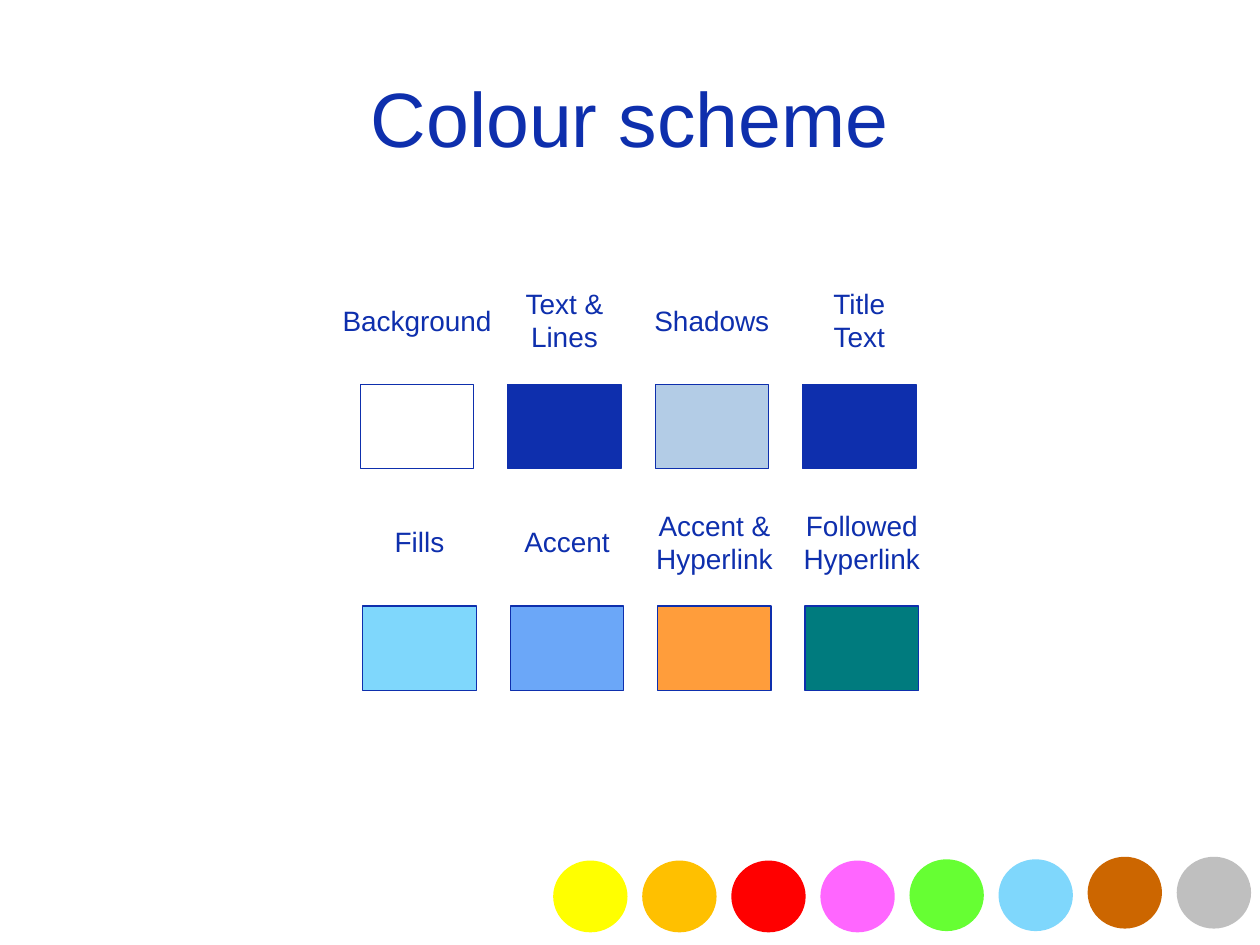
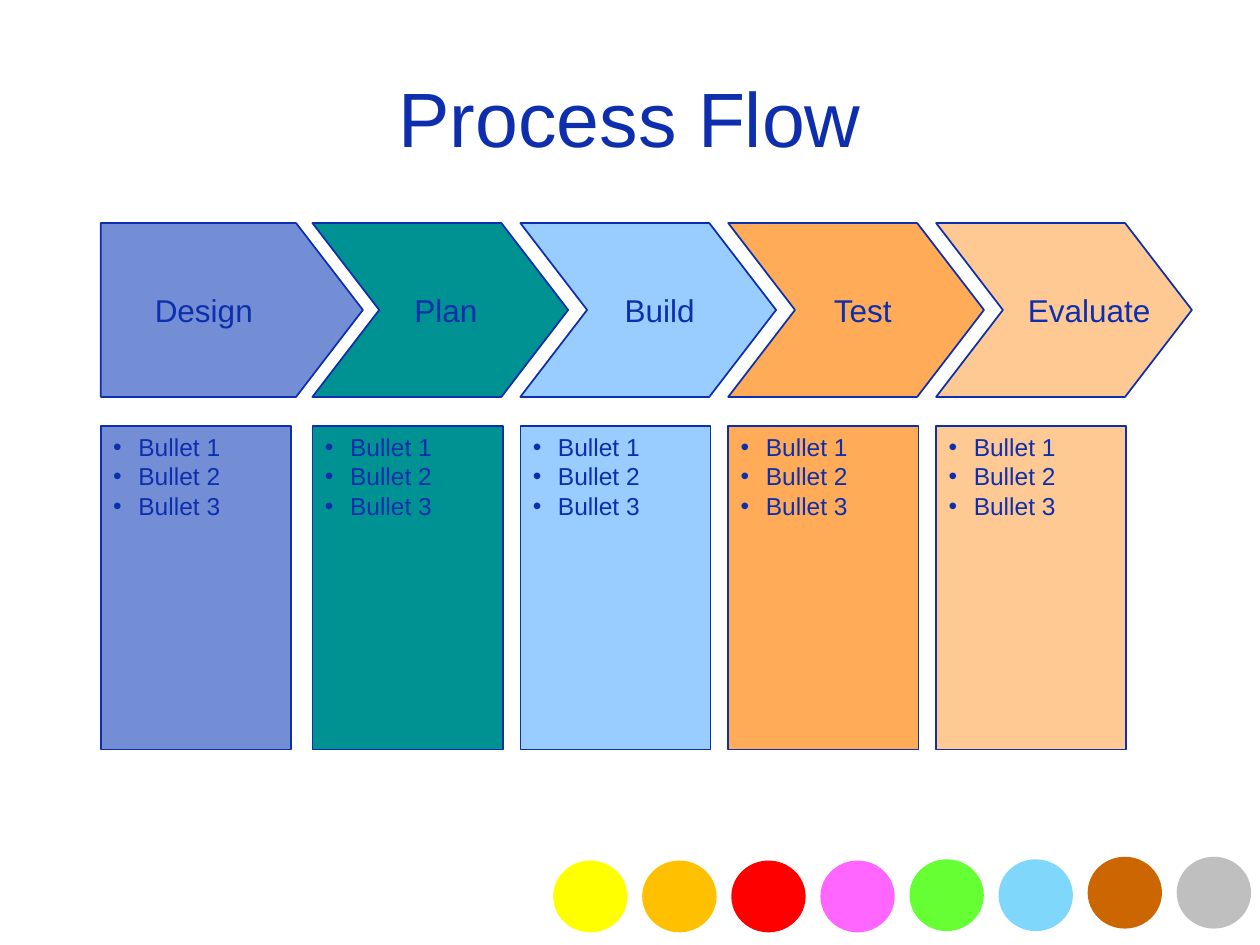
import pptx
import pptx.util
import pptx.dml.color
import pptx.enum.shapes
import pptx.enum.text
import lxml.etree

Inches = pptx.util.Inches
RGB = pptx.dml.color.RGBColor
SHAPE = pptx.enum.shapes.MSO_SHAPE
ALIGN = pptx.enum.text.PP_ALIGN
ANCHOR = pptx.enum.text.MSO_ANCHOR

WIDTH, HEIGHT = 10, 7.5
FONT = "Arial"
WHITE = RGB.from_string("FFFFFF")
NAVY = RGB.from_string("0E2FAD")
MIST = RGB.from_string("B3CCE6")
SKY = RGB.from_string("7FD7FC")
BLUE = RGB.from_string("6BA7F8")
ORANGE = RGB.from_string("FF9D3B")
TEAL = RGB.from_string("007B7E")
PERIWINKLE = RGB.from_string("748ED6")
SEA = RGB.from_string("009193")
PALE_BLUE = RGB.from_string("99CCFF")
APRICOT = RGB.from_string("FFAB57")
PEACH = RGB.from_string("FFC993")
YELLOW = RGB.from_string("FFFF00")
AMBER = RGB.from_string("FFC000")
RED = RGB.from_string("FF0000")
PINK = RGB.from_string("FF66FF")
LIME = RGB.from_string("66FF33")
BROWN = RGB.from_string("CC6600")
GREY = RGB.from_string("BFBFBF")


def paint(shape, fill, line_width=0):
    shape.shadow.inherit = False
    shape.fill.solid()
    shape.fill.fore_color.rgb = fill
    if line_width:
        shape.line.color.rgb = NAVY
        shape.line.width = pptx.util.Pt(line_width)
    else:
        shape.line.fill.background()


def write(shape, text, size, align=ALIGN.CENTER, **frame_format):
    """Put navy text in the shape, one paragraph per line."""
    frame = shape.text_frame
    frame.text = text
    frame_format = {"word_wrap": False, "vertical_anchor": ANCHOR.MIDDLE, **frame_format}
    for key, value in frame_format.items():
        setattr(frame, key, value)
    font_format = {"name": FONT, "size": pptx.util.Pt(size)}
    for paragraph in frame.paragraphs:
        paragraph.alignment = align
        for run in paragraph.runs:
            run.font.color.rgb = NAVY
            for key, value in font_format.items():
                setattr(run.font, key, value)


deck = pptx.Presentation()
deck.slide_width, deck.slide_height = Inches(WIDTH), Inches(HEIGHT)

# What both slides share: white ground, title and a row of dots
DOT_LEFT, DOT_PITCH, DOT_WIDTH, DOT_HEIGHT = 4.39, 0.707, 0.59, 0.57
DOTS = [(YELLOW, 6.83), (AMBER, 6.83), (RED, 6.83), (PINK, 6.83),
        (LIME, 6.82), (SKY, 6.82), (BROWN, 6.8), (GREY, 6.8)]
slides = []
for title in ("Colour scheme", "Process Flow"):
    slide = deck.slides.add_slide(deck.slide_layouts[6])
    slide.background.fill.solid()
    slide.background.fill.fore_color.rgb = WHITE
    dot_row = slide.shapes.add_group_shape()
    for column, (colour, top) in enumerate(DOTS):
        dot = dot_row.shapes.add_shape(
            SHAPE.OVAL, Inches(DOT_LEFT + column * DOT_PITCH), Inches(top),
            Inches(DOT_WIDTH), Inches(DOT_HEIGHT))
        paint(dot, colour)
    heading = slide.shapes.add_textbox(
        Inches(0.05 * WIDTH), Inches(0.04 * HEIGHT), Inches(0.9 * WIDTH), Inches(1.25))
    write(heading, title, 44, word_wrap=True)
    slides.append(slide)
scheme_slide, flow_slide = slides

# Colour scheme: two rows of labelled swatches
SWATCH_PITCH, SWATCH_WIDTH, SWATCH_HEIGHT = 1.17, 0.9, 0.67
LABEL_WIDTH, LABEL_HEIGHT, LABEL_RISE = 1.24, 0.64, 0.83
SWATCH_ROWS = [
    (2.86, 3.05, [("Background", WHITE), ("Text &\nLines", NAVY),
                  ("Shadows", MIST), ("Title\vText", NAVY)]),
    (2.88, 4.81, [("Fills", SKY), ("Accent", BLUE),
                  ("Accent &\nHyperlink", ORANGE), ("Followed\nHyperlink", TEAL)]),
]
for row_left, top, swatches in SWATCH_ROWS:
    for column, (role, colour) in enumerate(swatches):
        left = row_left + column * SWATCH_PITCH
        swatch = scheme_slide.shapes.add_shape(
            SHAPE.RECTANGLE, Inches(left), Inches(top),
            Inches(SWATCH_WIDTH), Inches(SWATCH_HEIGHT))
        paint(swatch, colour, 0.75)
        label = scheme_slide.shapes.add_textbox(
            Inches(left + (SWATCH_WIDTH - LABEL_WIDTH) / 2), Inches(top - LABEL_RISE),
            Inches(LABEL_WIDTH), Inches(LABEL_HEIGHT))
        write(label, role, 16, margin_left=0, margin_right=0)

# Process flow: five arrows, each above a panel of bullets
STEP_WIDTH, STEP_PITCH, TIP = 1.51, 1.65, 0.53
ARROW_TOP, ARROW_HEIGHT = 1.77, 1.38
PANEL_TOP, PANEL_HEIGHT = 3.38, 2.57
LABEL_TOP, STEP_LABEL_HEIGHT = 2.26, 0.4
BULLET_INDENT = Inches(0.2)
FIRST_LEFT, SECOND_LEFT = 0.8, 2.48
# Name, colour, left edge and width of the label
STEPS = [("Design", PERIWINKLE, 1.13, 0.98), ("Plan", SEA, 3.19, 0.7),
         ("Build", PALE_BLUE, 4.86, 0.76), ("Test", APRICOT, 6.52, 0.69),
         ("Evaluate", PEACH, 8.06, 1.17)]
for column, (step, colour, label_left, label_width) in enumerate(STEPS):
    first = column == 0
    left = FIRST_LEFT if first else SECOND_LEFT + (column - 1) * STEP_PITCH
    panel = flow_slide.shapes.add_shape(
        SHAPE.RECTANGLE, Inches(left), Inches(PANEL_TOP),
        Inches(STEP_WIDTH), Inches(PANEL_HEIGHT))
    paint(panel, colour, 1)
    write(panel, "Bullet 1\nBullet 2\nBullet 3", 14, ALIGN.LEFT,
          word_wrap=True, vertical_anchor=ANCHOR.TOP)
    for paragraph in panel.text_frame.paragraphs:
        properties = paragraph._p.get_or_add_pPr()
        properties.set("marL", str(BULLET_INDENT))
        properties.set("indent", str(-BULLET_INDENT))
        for tag, key, value in (("a:buFont", "typeface", FONT), ("a:buChar", "char", "•")):
            lxml.etree.SubElement(properties, pptx.oxml.ns.qn(tag)).set(key, value)

    middle, bottom = ARROW_TOP + ARROW_HEIGHT / 2, ARROW_TOP + ARROW_HEIGHT
    shoulder = left + (1.55 if first else 1.5)
    outline = [(left, ARROW_TOP), (shoulder, ARROW_TOP),
               (shoulder + TIP, middle), (shoulder, bottom), (left, bottom)]
    if not first:
        outline.append((left + TIP, middle))
    corners = [(Inches(x), Inches(y)) for x, y in outline]
    builder = flow_slide.shapes.build_freeform(*corners[0])
    builder.add_line_segments(corners[1:], close=True)
    paint(builder.convert_to_shape(), colour, 1)

    label = flow_slide.shapes.add_textbox(
        Inches(label_left), Inches(LABEL_TOP), Inches(label_width), Inches(STEP_LABEL_HEIGHT))
    write(label, step, 18, ALIGN.LEFT)

deck.save("out.pptx")
